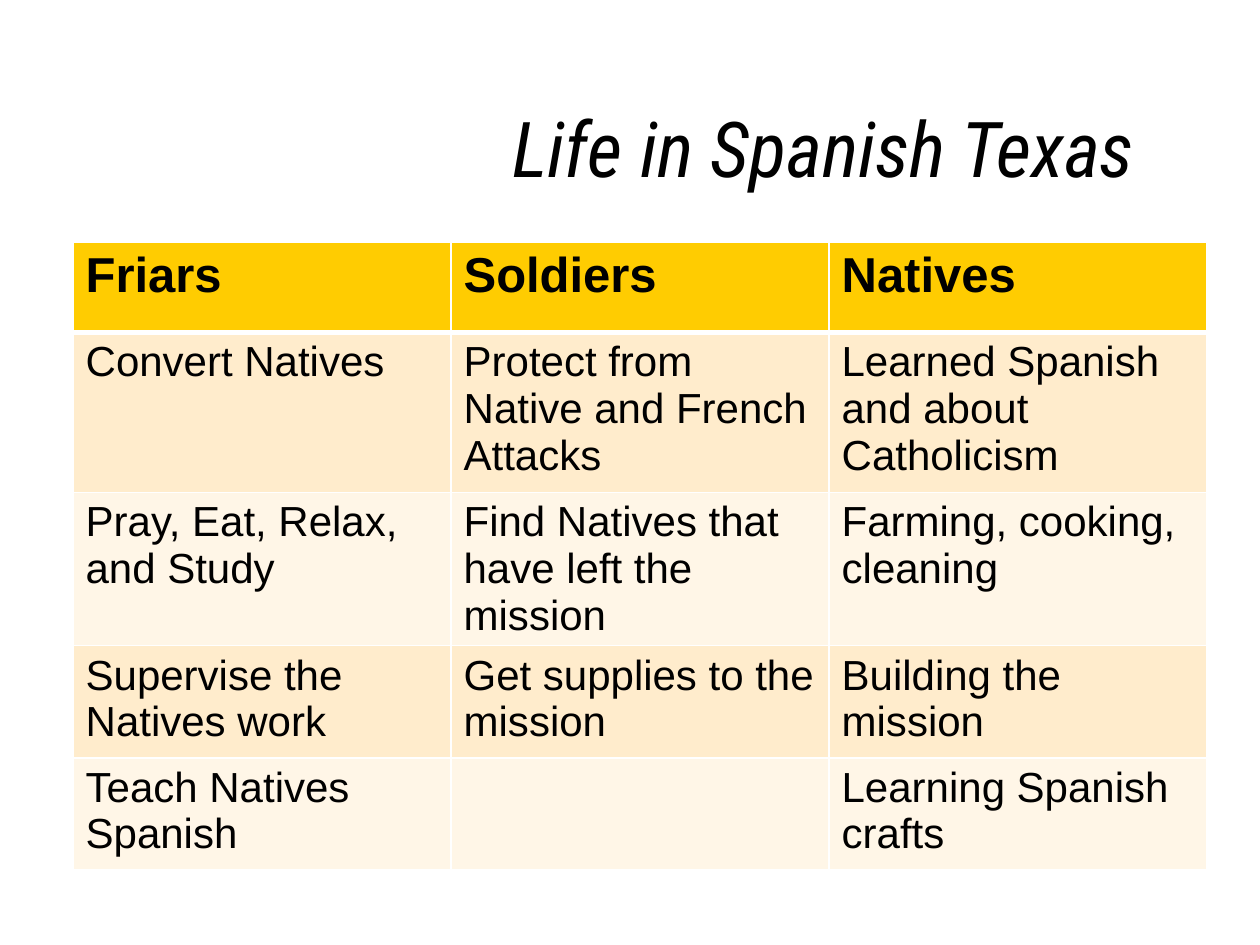
import dataclasses
import lxml.etree
import pptx
import pptx.dml.color
import pptx.enum.text
import pptx.oxml.ns
import pptx.util


@dataclasses.dataclass(frozen=True)
class Theme:
    """Colours, fonts and type sizes of the slide."""
    ink: str = "000000"
    rule: str = "FFFFFF"
    head: str = "FFCC01"
    bands: tuple = ("FFECCC", "FFF6E7")
    title_font: str = "Roboto Condensed"
    body_font: str = "Arial"
    title_size: int = 44
    head_size: int = 28
    body_size: int = 24
    thin: int = 1
    thick: int = 3


THEME = Theme()
WIDTH, HEIGHT = 10, 7.5
TITLE = "Life in Spanish Texas "
ROWS = [
    ("Friars", "Soldiers", "Natives"),
    ("Convert Natives", "Protect from Native and French Attacks",
     "Learned Spanish and about Catholicism"),
    ("Pray, Eat, Relax, and Study", "Find Natives that have left the mission",
     "Farming, cooking, cleaning"),
    ("Supervise the Natives work", "Get supplies to the mission",
     "Building the mission"),
    ("Teach Natives Spanish", "", "Learning Spanish crafts"),
]
TALLS = (0.72, 1.27, 0.89, 0.89, 0.89)


def style(part, face, size, bold=False, italic=False):
    """Format every run of a paragraph."""
    for run in part.runs:
        font = run.font
        font.name, font.size = face, pptx.util.Pt(size)
        font.bold, font.italic = bold, italic
        font.color.rgb = pptx.dml.color.RGBColor.from_string(THEME.ink)


def edge(cell, sides):
    """Draw cell borders from a map of side to width in points."""
    props = cell._tc.get_or_add_tcPr()
    qn = pptx.oxml.ns.qn
    for place, side in enumerate("LRTB"):
        line = lxml.etree.Element(qn("a:ln" + side),
                                  w=str(pptx.util.Pt(sides[side])))
        fill = lxml.etree.SubElement(line, qn("a:solidFill"))
        lxml.etree.SubElement(fill, qn("a:srgbClr"), val=THEME.rule)
        props.insert(place, line)


def add_title(slide, box):
    """Place the title in the box, right aligned on its base."""
    shape = slide.shapes.title
    shape.left, shape.top, shape.width, shape.height = map(pptx.util.Inches, box)
    frame = shape.text_frame
    frame.text = TITLE
    frame.word_wrap = True
    frame.auto_size = pptx.enum.text.MSO_AUTO_SIZE.NONE
    frame.vertical_anchor = pptx.enum.text.MSO_ANCHOR.BOTTOM
    part = frame.paragraphs[0]
    part.alignment = pptx.enum.text.PP_ALIGN.RIGHT
    style(part, THEME.title_font, THEME.title_size, italic=True)


def add_grid(slide, box):
    """Place the table of roles in the box, with a head row and bands."""
    grid = slide.shapes.add_table(len(ROWS), len(ROWS[0]),
                                  *map(pptx.util.Inches, box)).table
    for row, tall in zip(grid.rows, TALLS):
        row.height = pptx.util.Inches(tall)
    for r, texts in enumerate(ROWS):
        head = r == 0
        tint = THEME.head if head else THEME.bands[(r - 1) % 2]
        size = THEME.head_size if head else THEME.body_size
        sides = dict.fromkeys("LRTB", THEME.thin)
        if r < 2:
            sides["B" if head else "T"] = THEME.thick
        for c, text in enumerate(texts):
            cell = grid.cell(r, c)
            cell.text_frame.text = text
            cell.fill.solid()
            cell.fill.fore_color.rgb = pptx.dml.color.RGBColor.from_string(tint)
            edge(cell, sides)
            style(cell.text_frame.paragraphs[0], THEME.body_font, size, bold=head)


def main():
    """Build and save the slide."""
    deck = pptx.Presentation()
    deck.slide_width = pptx.util.Inches(WIDTH)
    deck.slide_height = pptx.util.Inches(HEIGHT)
    slide = deck.slides.add_slide(deck.slide_layouts[5])
    add_title(slide, (0.75, 0.25, 0.85 * WIDTH, 1.33))
    add_grid(slide, (0.58, 1.92, 0.9 * WIDTH, sum(TALLS)))
    deck.save("out.pptx")


if __name__ == "__main__":
    main()
